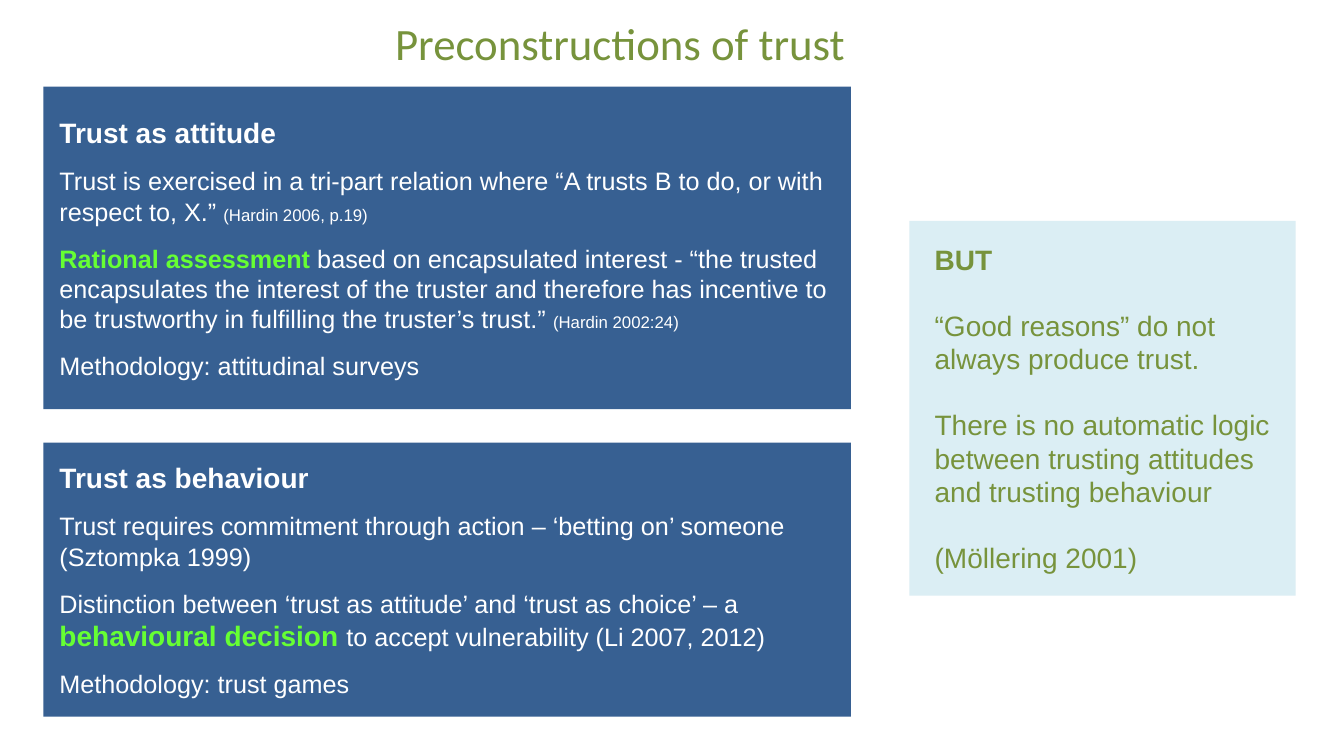
from pptx import Presentation
from pptx.dml.color import RGBColor
from pptx.enum.shapes import MSO_SHAPE
from pptx.enum.text import MSO_ANCHOR, PP_ALIGN
from pptx.util import Pt

PX = 9144  # EMU per px, 100 px to the inch


class Theme:
    blue = "376092"
    pale = "DBEEF4"
    olive = "77933C"
    green = "66FF33"
    white = "FFFFFF"
    title, head, body, cite = 32, 20, 18, 12
    font, title_font = "Arial", "Calibri"


def scale(box):
    return [n * PX for n in box]


def write(frame, paras, size=Theme.body, color=Theme.white, font=Theme.font,
          before=0, after=0, inset=(10, 5, 10, 5), anchor=MSO_ANCHOR.TOP):
    """Each paragraph is a list of (text, overrides) runs."""
    frame.word_wrap = True
    frame.vertical_anchor = anchor
    (frame.margin_left, frame.margin_top,
     frame.margin_right, frame.margin_bottom) = scale(inset)
    for i, runs in enumerate(paras):
        para = frame.add_paragraph() if i else frame.paragraphs[0]
        para.alignment = PP_ALIGN.LEFT
        para.space_before = Pt(before if i else 0)
        para.space_after = Pt(after)
        for text, look in runs:
            run = para.add_run()
            run.text = text
            run.font.name = font
            run.font.size = Pt(look.get("size", size))
            run.font.bold = look.get("bold", False)
            run.font.color.rgb = RGBColor.from_string(look.get("color", color))


def add_title(slide, box, text):
    frame = slide.shapes.add_textbox(*scale(box)).text_frame
    write(frame, [[(text, {})]], size=Theme.title, color=Theme.olive,
          font=Theme.title_font)


def add_panel(slide, box, fill, paras, **look):
    panel = slide.shapes.add_shape(MSO_SHAPE.RECTANGLE, *scale(box))
    panel.shadow.inherit = False
    panel.fill.solid()
    panel.fill.fore_color.rgb = RGBColor.from_string(fill)
    panel.line.fill.background()
    write(panel.text_frame, paras, anchor=MSO_ANCHOR.MIDDLE, **look)


def add_view(slide, box, paras):
    add_panel(slide, box, Theme.blue, paras, before=6, after=6,
              inset=(16, 16, 16, 16))


def add_doubt(slide, box, paras):
    add_panel(slide, box, Theme.pale, paras, size=Theme.head,
              color=Theme.olive, before=23, inset=(25, 16, 16, 16))


HEAD = {"size": Theme.head, "bold": True}
CITE = {"size": Theme.cite}
KEY = {"color": Theme.green, "bold": True}

ATTITUDE = [
    [("Trust as attitude", HEAD)],
    [("Trust is exercised in a tri-part relation where “A trusts B to do, "
      "or with respect to, X.” ", {}), ("(Hardin 2006, p.19)", CITE)],
    [("Rational assessment ", KEY),
     ("based on encapsulated interest - “the trusted encapsulates the "
      "interest of the truster and therefore has incentive to be trustworthy "
      "in fulfilling the truster’s trust.” ", {}),
     ("(Hardin 2002:24)", CITE)],
    [("Methodology: attitudinal surveys", {})],
]
BEHAVIOUR = [
    [("Trust as behaviour", HEAD)],
    [("Trust requires commitment through action – ‘betting on’ someone "
      "(Sztompka 1999)", {})],
    [("Distinction between ‘trust as attitude’ and ‘trust as choice’ – a ", {}),
     ("behavioural decision ", KEY | HEAD),
     ("to accept vulnerability (Li 2007, 2012)", {})],
    [("Methodology: trust games", {})],
]
DOUBT = [
    [("BUT", {"bold": True})],
    [("“Good reasons” do not always produce trust.", {})],
    [("There is no automatic logic between trusting attitudes and trusting "
      "behaviour", {})],
    [("(Möllering 2001)", {})],
]


def main():
    deck = Presentation()
    deck.slide_width, deck.slide_height = scale((1333, 750))
    slide = deck.slides.add_slide(deck.slide_layouts[6])
    add_title(slide, (382, 11, 520, 87), "Preconstructions of trust")
    add_view(slide, (43, 86, 801, 320), ATTITUDE)
    add_view(slide, (43, 439, 801, 272), BEHAVIOUR)
    add_doubt(slide, (902, 219, 383, 372), DOUBT)
    deck.save("out.pptx")


if __name__ == "__main__":
    main()
